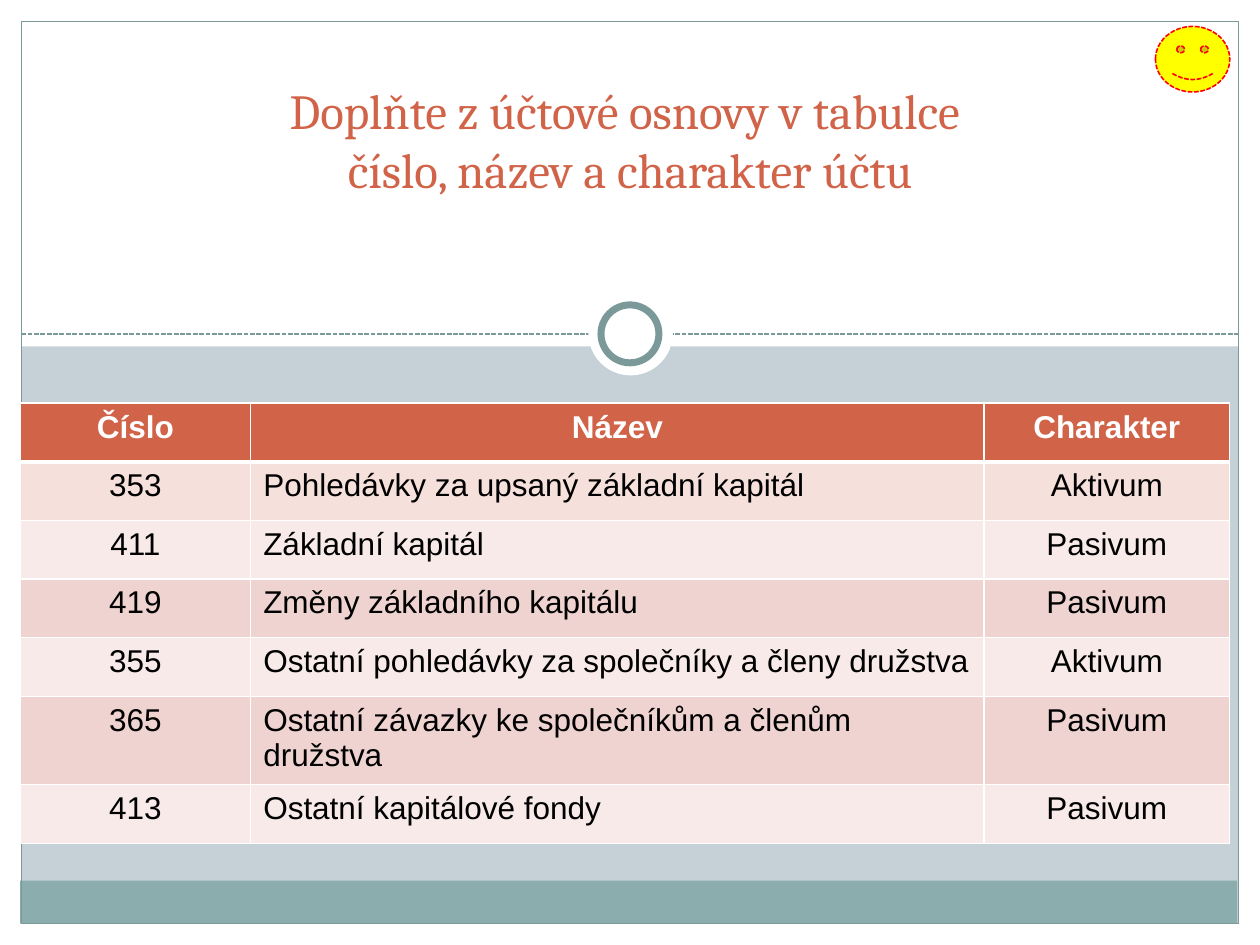
from dataclasses import dataclass
from typing import Optional

from lxml import etree
from pptx import Presentation
from pptx import util as u
from pptx.dml import color
from pptx.enum import dml, shapes, text
from pptx.oxml import ns

WHITE, TEAL, BAND, RUST = "FFFFFF", "7C999A", "8CADAE", "D16349"
BACKGROUND, BLACK, YELLOW, RED = "C5D1D7", "000000", "FFFF00", "FF0000"
FIRST_ROW, EVEN_ROW, ODD_ROW = "F6E0DB", "F7EAE9", "EED3D0"


@dataclass
class Panel:
    kind: shapes.MSO_SHAPE
    left: float
    top: float
    width: float
    height: float
    fill: Optional[str] = None
    line: Optional[str] = None
    line_width: float = 0.75
    dashed: bool = False


@dataclass
class Account:
    number: str
    name: str
    character: str


RECTANGLE, OVAL = shapes.MSO_SHAPE.RECTANGLE, shapes.MSO_SHAPE.OVAL
MARGINS = [
    Panel(RECTANGLE, 0, 7.33, 10, 0.17, WHITE),
    Panel(RECTANGLE, 9.83, 0, 0.17, 7.5, WHITE),
    Panel(RECTANGLE, 0, 0, 0.17, 7.5, WHITE),
    Panel(RECTANGLE, 0, 0, 10, 2.75, WHITE),
    Panel(RECTANGLE, 0.16, 6.99, 9.66, 0.34, BAND),
]
FRAME_AND_RING = [
    Panel(RECTANGLE, 0.17, 0.17, 9.66, 7.16, line=TEAL),
    Panel(OVAL, 4.67, 2.31, 0.67, 0.67, WHITE),
    Panel(OVAL, 4.77, 2.42, 0.46, 0.46, WHITE, TEAL, 4),
]
SMILEY = Panel(shapes.MSO_SHAPE.SMILEY_FACE, 9.17, 0.21, 0.59, 0.52,
               YELLOW, RED, 0.9, True)

HEADER = Account("Číslo", "Název", "Charakter")
ACCOUNTS = [
    Account("353", "Pohledávky za upsaný základní kapitál", "Aktivum"),
    Account("411", "Základní kapitál", "Pasivum"),
    Account("419", "Změny základního kapitálu", "Pasivum"),
    Account("355", "Ostatní pohledávky za společníky a členy družstva", "Aktivum"),
    Account("365", "Ostatní závazky ke společníkům a členům družstva", "Pasivum"),
    Account("413", "Ostatní kapitálové fondy", "Pasivum"),
]
COLUMN_WIDTHS = [1.83, 5.82, 1.95]


def rgb(value: str) -> color.RGBColor:
    return color.RGBColor.from_string(value)


def style_line(line, value: str, width: float, dashed: bool) -> None:
    line.color.rgb = rgb(value)
    line.width = u.Pt(width)
    if dashed:
        line.dash_style = dml.MSO_LINE.SQUARE_DOT


def draw_panel(slide, panel: Panel) -> None:
    shape = slide.shapes.add_shape(
        panel.kind, u.Inches(panel.left), u.Inches(panel.top),
        u.Inches(panel.width), u.Inches(panel.height))
    shape.shadow.inherit = False
    if panel.fill:
        shape.fill.solid()
        shape.fill.fore_color.rgb = rgb(panel.fill)
    else:
        shape.fill.background()
    if panel.line:
        style_line(shape.line, panel.line, panel.line_width, panel.dashed)
    else:
        shape.line.fill.background()


def draw_divider(slide) -> None:
    divider = slide.shapes.add_connector(
        shapes.MSO_CONNECTOR.STRAIGHT, u.Inches(0.17), u.Inches(2.65),
        u.Inches(9.83), u.Inches(2.65))
    style_line(divider.line, TEAL, 0.9, True)
    etree.SubElement(divider._element.spPr, ns.qn("a:effectLst"))


def style_text(text_frame, font_name: str, size: float, value: str,
               bold: bool = False, centred: bool = True) -> None:
    for paragraph in text_frame.paragraphs:
        paragraph.alignment = text.PP_ALIGN.CENTER if centred else text.PP_ALIGN.LEFT
        for run in paragraph.runs:
            run.font.name = font_name
            run.font.size = u.Pt(size)
            run.font.bold = bold
            run.font.color.rgb = rgb(value)


def draw_title(slide) -> None:
    title = slide.shapes.add_textbox(
        u.Inches(0.75), u.Inches(0.6), u.Inches(8.5), u.Inches(1.02))
    text_frame = title.text_frame
    text_frame.word_wrap = True
    text_frame.vertical_anchor = text.MSO_ANCHOR.BOTTOM
    text_frame.text = "Doplňte z účtové osnovy v tabulce \včíslo, název a charakter účtu"
    style_text(text_frame, "Cambria", 28, RUST)


def add_borders(cell, top: float, bottom: float) -> None:
    properties = cell._tc.get_or_add_tcPr()
    widths = {"a:lnL": 1, "a:lnR": 1, "a:lnT": top, "a:lnB": bottom}
    for tag, width in widths.items():
        border = etree.SubElement(properties, ns.qn(tag), w=str(u.Pt(width)))
        fill = etree.SubElement(border, ns.qn("a:solidFill"))
        etree.SubElement(fill, ns.qn("a:srgbClr"), val=WHITE)


def row_fill(row: int) -> str:
    if row < 2:
        return (RUST, FIRST_ROW)[row]
    return ODD_ROW if row % 2 else EVEN_ROW


def draw_table(slide) -> None:
    rows = [HEADER, *ACCOUNTS]
    table = slide.shapes.add_table(
        len(rows), len(COLUMN_WIDTHS), u.Inches(0.16), u.Inches(3.2),
        u.Inches(sum(COLUMN_WIDTHS)), u.Inches(3.26)).table
    table.horz_banding = False
    for column, width in zip(table.columns, COLUMN_WIDTHS):
        column.width = u.Inches(width)

    for row, account in enumerate(rows):
        is_header = row == 0
        values = (account.number, account.name, account.character)
        for column, value in enumerate(values):
            cell = table.cell(row, column)
            cell.text_frame.text = value
            style_text(cell.text_frame, "Arial", 18, WHITE if is_header else BLACK,
                       bold=is_header, centred=is_header or column != 1)
            add_borders(cell, top=3 if row == 1 else 1, bottom=3 if is_header else 1)
            cell.fill.solid()
            cell.fill.fore_color.rgb = rgb(row_fill(row))


def main() -> None:
    presentation = Presentation()
    presentation.slide_width = u.Inches(10)
    presentation.slide_height = u.Inches(7.5)
    slide = presentation.slides.add_slide(presentation.slide_layouts[6])

    # Background, white margins and bottom band
    slide.background.fill.solid()
    slide.background.fill.fore_color.rgb = rgb(BACKGROUND)
    for panel in MARGINS:
        draw_panel(slide, panel)

    # Divider, frame and ring
    draw_divider(slide)
    for panel in FRAME_AND_RING:
        draw_panel(slide, panel)

    # Title, account table and smiley
    draw_title(slide)
    draw_table(slide)
    draw_panel(slide, SMILEY)

    presentation.save("out.pptx")


if __name__ == "__main__":
    main()
